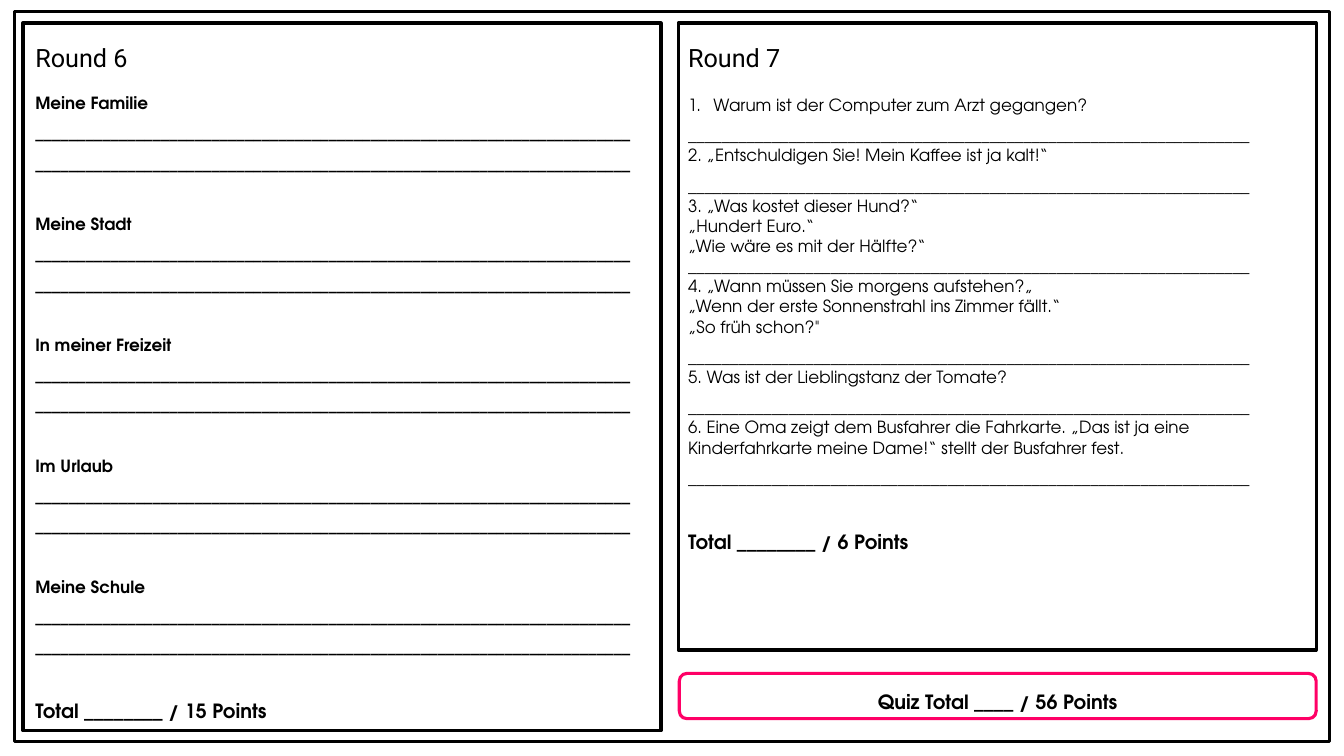
from dataclasses import dataclass

from lxml import etree
from pptx import Presentation
from pptx import util as u
from pptx.dml.color import RGBColor
from pptx.enum import shapes, text
from pptx.oxml.ns import qn


@dataclass(frozen=True)
class Theme:
    ink: RGBColor = RGBColor(0, 0, 0)
    accent: RGBColor = RGBColor(0xFF, 0x00, 0x66)
    title_font: str = "Roboto"
    body_font: str = "TeX Gyre Adventor"
    title_size: u.Pt = u.Pt(18)
    body_size: u.Pt = u.Pt(12)
    total_size: u.Pt = u.Pt(14)
    border: u.Pt = u.Pt(2.25)
    section_gap: u.Pt = u.Pt(21.6)


theme = Theme()
prs = Presentation()
prs.slide_width, prs.slide_height = u.Cm(33.87), u.Cm(19.05)
slide = prs.slides.add_slide(prs.slide_layouts[6])


def add_frame(left, top, width, height, color=theme.ink, kind=shapes.MSO_SHAPE.RECTANGLE):
    frame = slide.shapes.add_shape(kind, u.Cm(left), u.Cm(top), u.Cm(width), u.Cm(height))
    frame.shadow.inherit = False
    frame.fill.background()
    frame.line.color.rgb = color
    frame.line.width = theme.border
    return frame


def write(body, lines, font=theme.body_font):
    body.word_wrap = True
    for i, (words, size, bold, spacing, gap) in enumerate(lines):
        paragraph = body.paragraphs[0] if i == 0 else body.add_paragraph()
        paragraph.text = words
        paragraph.line_spacing = spacing
        paragraph.space_before = gap
        paragraph.font.name = font
        paragraph.font.size = size
        paragraph.font.bold = bold
        paragraph.font.color.rgb = theme.ink


add_frame(0.36, 0.3, 33.15, 18.39)
add_frame(0.58, 0.58, 16.08, 17.83)
add_frame(17.09, 0.58, 16.08, 15.8)

for heading, left in (("Round 6", 0.64), ("Round 7", 17.09)):
    title = slide.shapes.add_textbox(u.Cm(left), u.Cm(0.94), u.Cm(6.86), u.Cm(1.02))
    write(title.text_frame, [(heading, theme.title_size, False, 1.0, 0)], theme.title_font)

topics = ["Meine Familie", "Meine Stadt", "In meiner Freizeit", "Im Urlaub", "Meine Schule"]
topic_lines = []
for i, topic in enumerate(topics):
    topic_lines += [
        (topic, theme.body_size, True, 1.5, theme.section_gap if i else 0),
        ("_" * 142, theme.body_size, True, 1.5, 0),
    ]
topic_lines.append(
    ("Total ________ / 15 Points", theme.total_size, True, 1.5, theme.section_gap))
round_6 = slide.shapes.add_textbox(u.Cm(0.64), u.Cm(1.96), u.Cm(15.67), u.Cm(16.43))
write(round_6.text_frame, topic_lines)

answer = "_" * 67
jokes = [
    "Warum ist der Computer zum Arzt gegangen?",
    answer,
    "2. „Entschuldigen Sie! Mein Kaffee ist ja kalt!“",
    answer,
    "3. „Was kostet dieser Hund?“",
    "„Hundert Euro.“",
    "„Wie wäre es mit der Hälfte?“ " + answer,
    "4. „Wann müssen Sie morgens aufstehen?„",
    "„Wenn der erste Sonnenstrahl ins Zimmer fällt.“",
    "„So früh schon?\"",
    answer,
    "5. Was ist der Lieblingstanz der Tomate?",
    answer,
    "6. Eine Oma zeigt dem Busfahrer die Fahrkarte. „Das ist ja eine "
    "Kinderfahrkarte meine Dame!“ stellt der Busfahrer fest.",
    answer,
]
joke_lines = [(joke, theme.body_size, False, 1.5 if joke == answer else 1.0, 0) for joke in jokes]
joke_lines.append(
    ("Total ________ / 6 Points", theme.total_size, True, 1.5, theme.section_gap))
round_7 = slide.shapes.add_textbox(u.Cm(17.09), u.Cm(2.26), u.Cm(15.67), u.Cm(11.81))
write(round_7.text_frame, joke_lines)

numbering = round_7.text_frame.paragraphs[0]._p.get_or_add_pPr()
numbering.set("marL", str(u.Cm(0.64)))
numbering.set("indent", str(-u.Cm(0.64)))
bullet = etree.Element(qn("a:buAutoNum"), type="arabicPeriod")
numbering.find(qn("a:defRPr")).addprevious(bullet)

quiz_total = add_frame(17.12, 16.97, 16.05, 1.14, theme.accent, shapes.MSO_SHAPE.ROUNDED_RECTANGLE)
write(quiz_total.text_frame, [("Quiz Total ____ / 56 Points", theme.total_size, True, 1.5, 0)])
quiz_total.text_frame.vertical_anchor = text.MSO_ANCHOR.MIDDLE
quiz_total.text_frame.paragraphs[0].alignment = text.PP_ALIGN.CENTER

prs.save("out.pptx")
